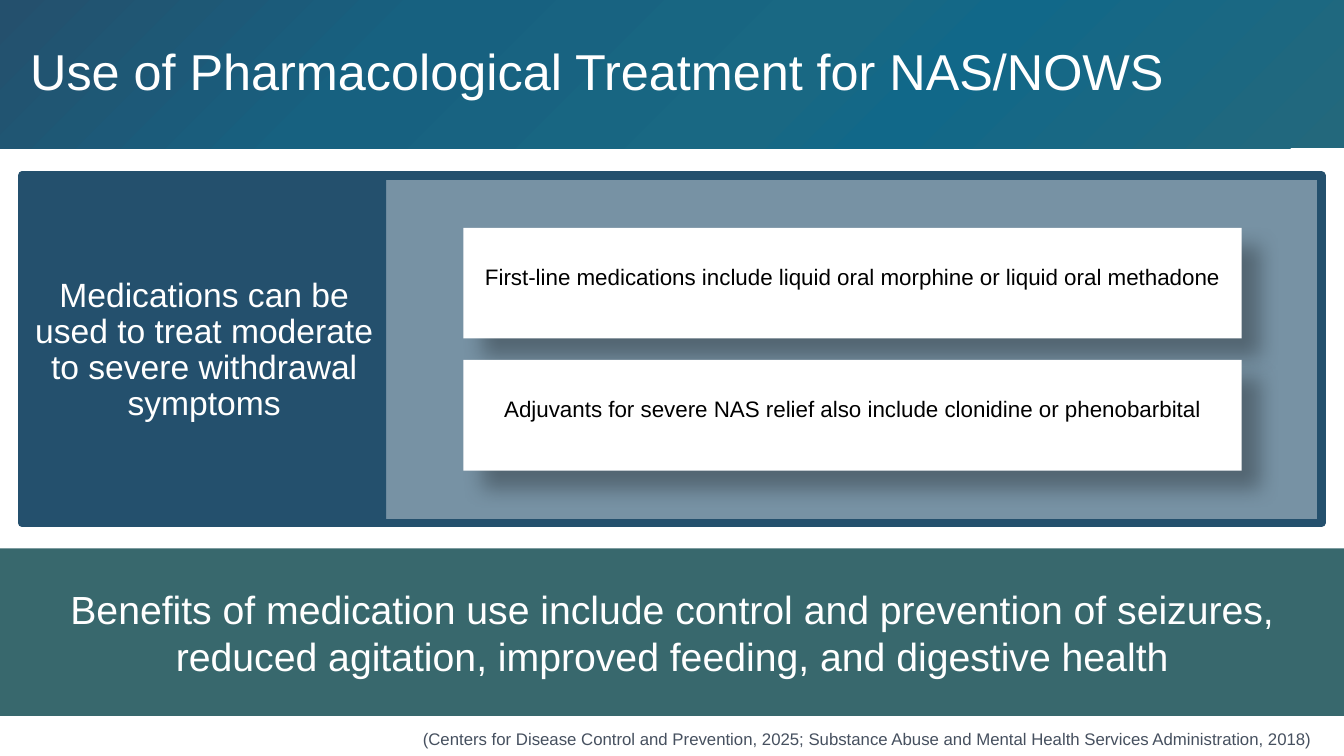
from copy import deepcopy

from lxml import etree
from pptx import Presentation
from pptx.dml.color import RGBColor
from pptx.enum import shapes, text
from pptx.oxml import ns
from pptx.util import Cm, Pt

WHITE, NAVY, TEAL = "FFFFFF", "24506D", "38686D"
LEFT, MID, RIGHT = text.PP_ALIGN.LEFT, text.PP_ALIGN.CENTER, text.PP_ALIGN.RIGHT
WIDE = 33.87


def rgb(code):
    """Return the colour for a hex string."""
    return RGBColor.from_string(code)


def add_sub(node, tag, **attrs):
    """Append a drawing element with attributes and return it."""
    return etree.SubElement(node, ns.qn(tag), {k: str(v) for k, v in attrs.items()})


def add_rect(slide, box, fill):
    """Draw a plain rectangle without line or shadow."""
    rect = slide.shapes.add_shape(shapes.MSO_SHAPE.RECTANGLE, *map(Cm, box))
    rect.shadow.inherit = False
    rect.fill.solid()
    rect.fill.fore_color.rgb = rgb(fill)
    rect.line.fill.background()
    return rect


def set_text(shape, words, size, color=WHITE, align=MID, lead=0.9,
             pads=(0.25, 0.13, 0.25, 0.13)):
    """Write one paragraph, centred in height, with the given insets."""
    frame = shape.text_frame
    frame.word_wrap = True
    frame.vertical_anchor = text.MSO_ANCHOR.MIDDLE
    (frame.margin_left, frame.margin_top,
     frame.margin_right, frame.margin_bottom) = map(Cm, pads)
    frame.text = words
    para = frame.paragraphs[0]
    para.alignment = align
    para.line_spacing = lead
    font = para.runs[0].font
    font.name, font.size = "Arial", Pt(size)
    font.color.rgb = rgb(color)


def set_blend(shape, stops, angle):
    """Fill a shape with a linear gradient of (position, colour) stops."""
    shape.fill.gradient()
    shape.fill.gradient_angle = angle
    group = shape._element.spPr.find(".//" + ns.qn("a:gsLst"))
    while len(group) < len(stops):
        group.append(deepcopy(group[0]))
    for stop, (place, color) in zip(shape.fill.gradient_stops, stops):
        stop.position = place
        stop.color.rgb = rgb(color)


def add_frame(slide):
    """Draw the translucent panel with its thick border."""
    frame = add_rect(slide, (0.56, 4.42, 32.74, 8.76), NAVY)
    frame.line.color.rgb = rgb(NAVY)
    frame.line.width = Pt(6)
    tint = frame._element.spPr.find(ns.qn("a:solidFill"))[0]
    add_sub(tint, "a:alpha", val=62000)


def add_card(slide, top, words):
    """Draw a white card with a soft shadow and its text."""
    card = add_rect(slide, (11.68, top, 19.61, 2.79), WHITE)
    effect = card._element.spPr.find(ns.qn("a:effectLst"))
    shade = add_sub(effect, "a:outerShdw", blurRad=Pt(15), dist=Pt(18),
                    dir=45 * 60000, algn="tl", rotWithShape=0)
    tint = add_sub(shade, "a:srgbClr", val="000000")
    add_sub(tint, "a:alpha", val=30000)
    set_text(card, words, 16, "000000", pads=(0.25, 0.25, 0.25, 0.51))


def add_title(slide):
    """Draw the gradient title band."""
    band = add_rect(slide, (0, 0, WIDE, 3.74), NAVY)
    set_blend(band, [(0, "23687C"), (0.32, "116889"), (0.41, "196883"),
                     (0.7, "176180"), (1, NAVY)], 135)
    set_text(band, "Use of Pharmacological Treatment for NAS/NOWS", 36,
             align=LEFT, pads=(0.76, 0.13, 0.25, 0.13))


def add_cite(slide):
    """Add the citation line at the foot."""
    cite = slide.shapes.add_textbox(Cm(9.73), Cm(17.83), Cm(23.55), Cm(1.55))
    set_text(cite, "(Centers for Disease Control and Prevention, 2025; Substance "
             "Abuse and Mental Health Services Administration, 2018)", 12,
             "46505F", RIGHT, 1.0, (0.25, 0.13, 0.2, 0.13))


def main():
    """Build and save the slide."""
    deck = Presentation()
    deck.slide_width, deck.slide_height = Cm(WIDE), Cm(19.05)
    slide = deck.slides.add_slide(deck.slide_layouts[6])
    add_frame(slide)
    add_title(slide)
    side = add_rect(slide, (0.56, 4.39, 9.17, 8.89), NAVY)
    set_text(side, "Medications can be used to treat moderate to severe "
             "withdrawal symptoms", 24)
    cards = ["First-line medications include liquid oral morphine or liquid oral methadone",
             "Adjuvants for severe NAS relief also include clonidine or phenobarbital"]
    for row, words in enumerate(cards):
        add_card(slide, 5.74 + row * 3.33, words)
    gains = add_rect(slide, (0, 13.82, WIDE, 4.22), TEAL)
    set_text(gains, "Benefits of medication use include control and prevention of "
             "seizures, reduced agitation, improved feeding, and digestive health",
             28, lead=1.0)
    add_cite(slide)
    deck.save("out.pptx")


if __name__ == "__main__":
    main()
